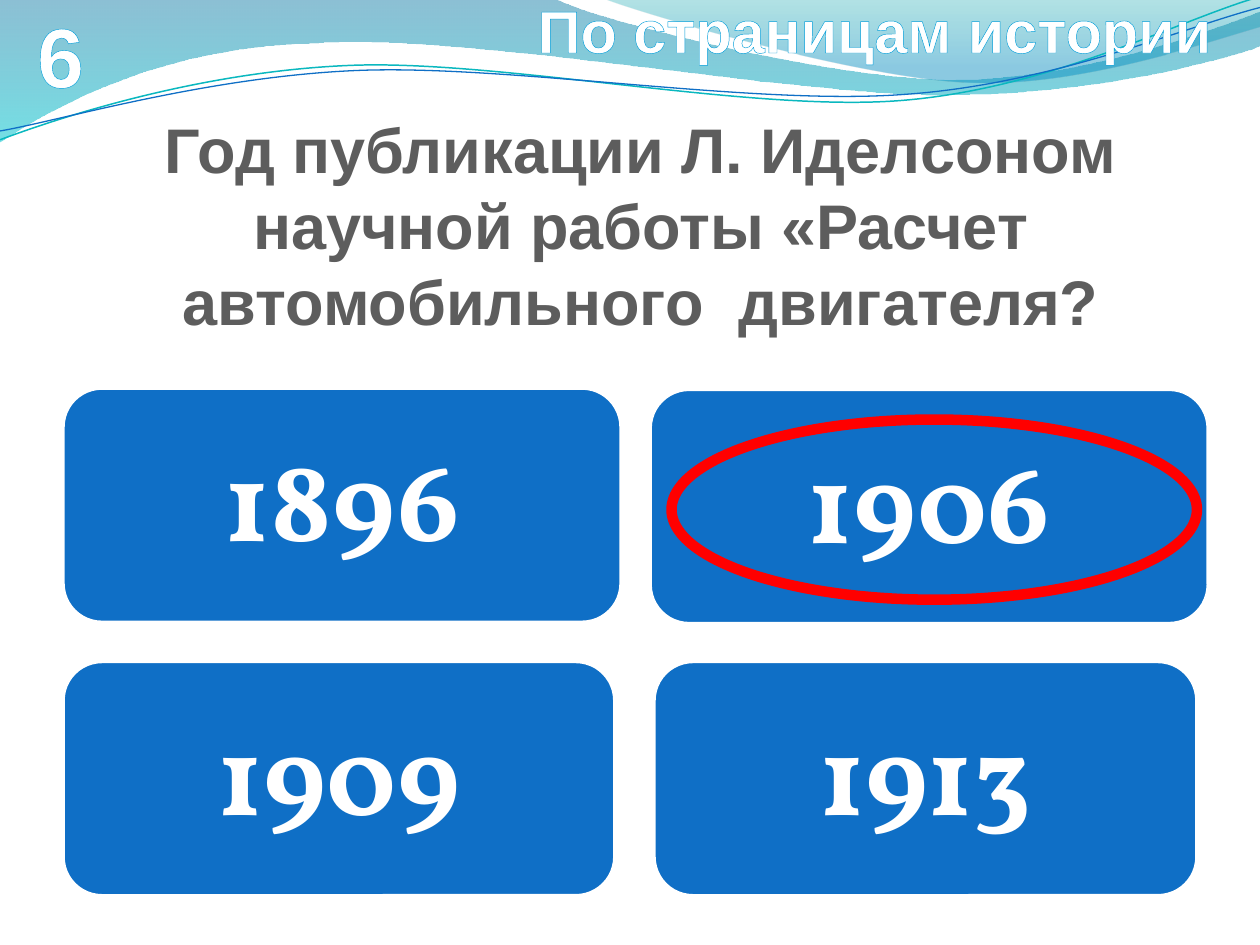
import dataclasses
import math

import lxml.etree
import pptx
import pptx.dml.color
import pptx.enum.shapes
import pptx.enum.text
import pptx.oxml.ns
import pptx.util

Inches = pptx.util.Inches
Pt = pptx.util.Pt
Align = pptx.enum.text.PP_ALIGN
Anchor = pptx.enum.text.MSO_ANCHOR
Fit = pptx.enum.text.MSO_AUTO_SIZE
Preset = pptx.enum.shapes.MSO_SHAPE
qn = pptx.oxml.ns.qn


@dataclasses.dataclass(frozen=True)
class Theme:
    """Colours, fonts and type sizes of the quiz slide."""
    blue: str = "0F6FC6"
    white: str = "FFFFFF"
    grey: str = "5D5D5D"
    red: str = "FF0000"
    edge: str = "009DD9"
    teal: str = "0AB8BF"
    text_font: str = "Arial"
    answer_font: str = "Vollkorn"
    question_size: int = 36
    header_size: int = 34
    number_size: int = 48
    answer_size: int = 65


THEME = Theme()

BANDS = [
    ((0, 0), [
        [(4.4, -0.01)],
        [(4.76, 0.17), (6.64, 0.63), (7.58, 0.63)],
        [(8.53, 0.63), (9.58, 0.26), (10, 0.09)],
        [(10.01, 0.36)],
        [(9.83, 0.44), (8.7, 0.76), (7.46, 0.75)],
        [(6.22, 0.75), (3.82, 0.28), (2.57, 0.34)],
        [(1.29, 0.36), (0.46, 0.83), (-0.01, 1.13)],
    ], [(0, "0074A1", 45), (1, "00C6CF", 55)]),
    ((4.79, -0.01), [
        [(5.09, 0.11), (6.82, 0.62), (7.69, 0.65)],
        [(8.56, 0.69), (9.61, 0.32), (10, 0.21)],
        [(10, 0)],
    ], [(0, "00A1A9", 30), (0.8, "008BBF", 45)]),
]

STRANDS = [
    ((0, 1.11), [
        [(0.48, 0.93), (1.58, 0.57), (2.77, 0.52)],
        [(3.95, 0.47), (5.93, 0.89), (7.13, 0.8)],
        [(8.33, 0.71), (9.38, 0.15), (9.98, -0.02)],
    ], THEME.teal, 0.85),
    ((0, 1.04), [
        [(0.47, 0.96), (1.64, 0.61), (2.83, 0.56)],
        [(4.03, 0.51), (5.97, 0.84), (7.17, 0.75)],
        [(8.36, 0.67), (9.41, 0.21), (10, 0.06)],
    ], THEME.blue, 0.75),
]
STRAND_CENTER = (5, 0.58)
STRAND_ANGLE = 357.3

ANSWERS = [
    ("1896", 0.5, 3.08, 4.43),
    ("1906", 5.16, 3.09, 4.43),
    ("1909", 0.5, 5.25, 4.38),
    ("1913", 5.19, 5.25, 4.31),
]
ANSWER_HEIGHT = 1.86


def rgb(code):
    """Return the colour for a hexadecimal code."""
    return pptx.dml.color.RGBColor.from_string(code)


def set_line(shape, color, width):
    """Give the shape a solid outline."""
    shape.line.color.rgb = rgb(color)
    shape.line.width = Pt(width)


def level(point):
    """Turn a strand point back to the unrotated frame."""
    angle = math.radians(-STRAND_ANGLE)
    x, y = (value - middle for value, middle in zip(point, STRAND_CENTER))
    return (STRAND_CENTER[0] + x * math.cos(angle) - y * math.sin(angle),
            STRAND_CENTER[1] + x * math.sin(angle) + y * math.cos(angle))


def add_curve(page, start, segments, close):
    """Draw a freeform through straight and cubic segments."""
    corners = [(Inches(x), Inches(y)) for x, y in [start] + [part[-1] for part in segments]]
    builder = page.shapes.build_freeform(*corners[0], scale=1.0)
    builder.add_line_segments(corners[1:], close=close)
    shape = builder.convert_to_shape()
    shape.shadow.inherit = False
    steps = list(shape._element.spPr.iter(qn("a:lnTo")))
    for step, segment in zip(steps, segments):
        if len(segment) == 3:
            curve = lxml.etree.Element(qn("a:cubicBezTo"))
            for x, y in segment:
                point = lxml.etree.SubElement(curve, qn("a:pt"))
                point.set("x", str(Inches(x) - shape.left))
                point.set("y", str(Inches(y) - shape.top))
            step.getparent().replace(step, curve)
    return shape


def add_band(page, start, segments, stops):
    """Add a translucent wave that fades from top to bottom."""
    band = add_curve(page, start, segments, close=True)
    band.line.fill.background()
    band.fill.gradient()
    band.fill.gradient_angle = 270
    for stop, (position, color, _) in zip(band.fill.gradient_stops, stops):
        stop.position = position
        stop.color.rgb = rgb(color)
    colors = band._element.spPr.iter(qn("a:srgbClr"))
    for element, (_, _, opacity) in zip(colors, stops):
        alpha = lxml.etree.SubElement(element, qn("a:alpha"))
        alpha.set("val", str(opacity * 1000))


def add_strand(page, start, segments, color, width):
    """Add a thin wavy line with a slight tilt."""
    flat = [[level(point) for point in segment] for segment in segments]
    strand = add_curve(page, level(start), flat, close=False)
    strand.rotation = STRAND_ANGLE
    strand.fill.background()
    set_line(strand, color, width)


def set_text(box, text, font, size, color, align=Align.CENTER):
    """Write one bold paragraph and return it."""
    box.text_frame.text = text
    para = box.text_frame.paragraphs[0]
    para.alignment = align
    for span in para.runs:
        span.font.name = font
        span.font.size = Pt(size)
        span.font.bold = True
        span.font.color.rgb = rgb(color)
    return para


def outline_text(para, color, width):
    """Draw an outline around the letters of a paragraph."""
    for span in para.runs:
        line = pptx.oxml.parse_xml(
            f'<a:ln {pptx.oxml.ns.nsdecls("a")} w="{Pt(width)}">'
            f'<a:solidFill><a:srgbClr val="{color}"/></a:solidFill></a:ln>')
        span.font._element.insert(0, line)


def add_question(page, text):
    """Put the question into the title placeholder."""
    title = page.shapes.title
    title.left, title.top, title.width, title.height = map(Inches, (0.42, 0.83, 9.33, 1.92))
    title.text_frame.auto_size = Fit.NONE
    title.text_frame.vertical_anchor = Anchor.TOP
    para = set_text(title, text, THEME.text_font, THEME.question_size, THEME.grey)
    para.line_spacing = 1.0
    outline_text(para, THEME.white, 1.4)


def add_label(page, text, bounds, size, align, wrap):
    """Add white outlined text over the waves."""
    box = page.shapes.add_textbox(*map(Inches, bounds))
    box.text_frame.word_wrap = wrap
    box.text_frame.auto_size = Fit.SHAPE_TO_FIT_TEXT
    para = set_text(box, text, THEME.text_font, size, THEME.white, align)
    outline_text(para, THEME.edge, 0.52)


def add_answer(page, text, left, top, width):
    """Add a rounded card with a year."""
    card = page.shapes.add_shape(
        Preset.ROUNDED_RECTANGLE, *map(Inches, (left, top, width, ANSWER_HEIGHT)))
    card.shadow.inherit = False
    card.fill.solid()
    card.fill.fore_color.rgb = rgb(THEME.blue)
    set_line(card, THEME.white, 2)
    frame = card.text_frame
    frame.vertical_anchor = Anchor.MIDDLE
    frame.margin_left = frame.margin_right = Inches(0.27)
    frame.margin_top = frame.margin_bottom = Inches(0.27)
    para = set_text(card, text, THEME.answer_font, THEME.answer_size, THEME.white)
    para.line_spacing = 0.9


def add_mark(page):
    """Circle the right answer."""
    mark = page.shapes.add_shape(Preset.OVAL, *map(Inches, (5.33, 3.33, 4.17, 1.43)))
    mark.shadow.inherit = False
    mark.fill.background()
    set_line(mark, THEME.red, 6)


def main():
    """Build the quiz slide and save it."""
    deck = pptx.Presentation()
    deck.slide_width, deck.slide_height = Inches(10), Inches(7.5)
    page = deck.slides.add_slide(deck.slide_layouts[5])
    for band in BANDS:
        add_band(page, *band)
    for strand in STRANDS:
        add_strand(page, *strand)
    for answer in ANSWERS:
        add_answer(page, *answer)
    add_question(page, "Год публикации Л. Иделсоном научной работы «Расчет автомобильного  двигателя?")
    add_label(page, "По страницам истории", (4.17, -0.1, 5.83, 0.67),
              THEME.header_size, Align.LEFT, True)
    add_label(page, "6", (0.19, -0.02, 0.58, 0.91), THEME.number_size, Align.CENTER, False)
    add_mark(page)
    deck.save("out.pptx")


if __name__ == "__main__":
    main()
